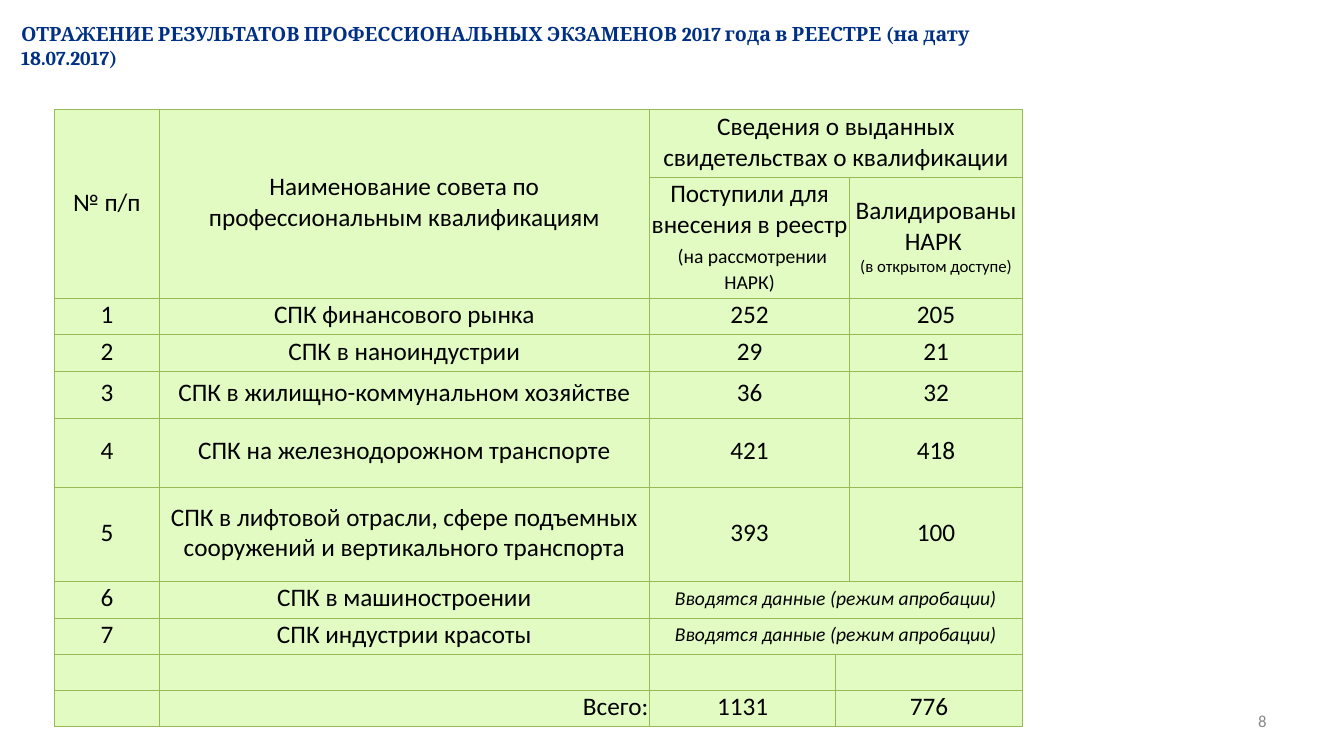
from lxml import etree
from pptx import Presentation
from pptx.dml.color import RGBColor
from pptx.enum import text
from pptx.oxml import ns
from pptx.util import Inches, Pt

COLORS = {"title": "003085", "text": "000000", "fill": "E2FBC2",
          "border": "98B955", "number": "898989"}
CENTER, RIGHT, LEFT = text.PP_ALIGN.CENTER, text.PP_ALIGN.RIGHT, text.PP_ALIGN.LEFT


def add_run(paragraph, content, color="text", **formats):
    run = paragraph.add_run()
    run.text = content
    run.font.color.rgb = RGBColor.from_string(COLORS[color])
    for name, value in {"name": "Calibri", "size": Pt(18), "bold": False, **formats}.items():
        setattr(run.font, name, value)


def style_cell(cell):
    """Apply the shared fill, margins, anchor and thin borders."""
    cell.fill.solid()
    cell.fill.fore_color.rgb = RGBColor.from_string(COLORS["fill"])
    cell.vertical_anchor = text.MSO_ANCHOR.MIDDLE
    cell.margin_left = cell.margin_right = cell.margin_top = Inches(0.01)
    cell.margin_bottom = Inches(0.04)
    properties = cell._tc.get_or_add_tcPr()
    for position, side in enumerate(("lnL", "lnR", "lnT", "lnB")):
        line = etree.Element(ns.qn(f"a:{side}"), w=str(Pt(0.75)))
        fill = etree.SubElement(line, ns.qn("a:solidFill"))
        etree.SubElement(fill, ns.qn("a:srgbClr"), val=COLORS["border"])
        properties.insert(position, line)


presentation = Presentation()
presentation.slide_width = Inches(13.33)
presentation.slide_height = Inches(7.5)
slide = presentation.slides.add_slide(presentation.slide_layouts[5])

# Title
title = slide.shapes.title
title.left, title.top, title.width, title.height = map(Inches, (0.11, 0.09, 10.04, 0.73))
title.text_frame.auto_size = text.MSO_AUTO_SIZE.NONE
title.text_frame.vertical_anchor = text.MSO_ANCHOR.MIDDLE
paragraph = title.text_frame.paragraphs[0]
paragraph.alignment = LEFT
add_run(paragraph, "ОТРАЖЕНИЕ РЕЗУЛЬТАТОВ ПРОФЕССИОНАЛЬНЫХ ЭКЗАМЕНОВ 2017 года "
        "в РЕЕСТРЕ (на дату 18.07.2017)", "title", name="Cambria", size=Pt(14), bold=True)

# Table grid
widths = [1.04, 4.86, 1.85, 0.14, 1.71]
heights = [0.67, 1.2, 0.36, 0.36, 0.47, 0.68, 0.94, 0.36, 0.36, 0.36, 0.36]
table = slide.shapes.add_table(
    len(heights), len(widths), Inches(0.54), Inches(1.09),
    Inches(sum(widths)), Inches(sum(heights))).table
table.first_row = table.horz_banding = False
for column, width in zip(table.columns, widths):
    column.width = Inches(width)
for row, height in zip(table.rows, heights):
    row.height = Inches(height)
for cell in table.iter_cells():
    style_cell(cell)
    cell.text_frame.paragraphs[0].font.size = Pt(18)

# Header
for first, last in [((0, 0), (1, 0)), ((0, 1), (1, 1)), ((0, 2), (0, 4)), ((1, 2), (1, 3))]:
    table.cell(*first).merge(table.cell(*last))
headers = {(0, 0): "№ п/п",
           (0, 1): "Наименование совета по профессиональным квалификациям",
           (0, 2): "Сведения о выданных свидетельствах о квалификации",
           (1, 2): "Поступили для внесения в реестр",
           (1, 4): "Валидированы НАРК "}
for position, content in headers.items():
    paragraph = table.cell(*position).text_frame.paragraphs[0]
    paragraph.alignment = CENTER
    add_run(paragraph, content)
received_note = table.cell(1, 2).text_frame.add_paragraph()
received_note.alignment = CENTER
add_run(received_note, " ")
add_run(received_note, "(на рассмотрении НАРК)", size=Pt(14))
validated = table.cell(1, 4).text_frame.paragraphs[0]
validated.add_line_break()
add_run(validated, "(в открытом доступе)", size=Pt(12))

# Councils: name, received, validated (no figures while data are being entered)
councils = [
    ("СПК финансового рынка", 252, 205),
    ("СПК в наноиндустрии", 29, 21),
    ("СПК в жилищно-коммунальном хозяйстве", 36, 32),
    ("СПК на железнодорожном транспорте", 421, 418),
    ("СПК в лифтовой отрасли, сфере подъемных сооружений и вертикального транспорта", 393, 100),
    ("СПК в машиностроении",),
    ("СПК индустрии красоты",),
]
for number, (council, *figures) in enumerate(councils, 1):
    row = number + 1
    table.cell(row, 2).merge(table.cell(row, 3 if figures else 4))
    contents = {0: number, 1: council}
    contents.update(zip((2, 4), figures or ["Вводятся данные (режим апробации)"]))
    for column, content in contents.items():
        paragraph = table.cell(row, column).text_frame.paragraphs[0]
        paragraph.alignment = CENTER
        pending = column == 2 and not figures
        add_run(paragraph, str(content), size=Pt(14 if pending else 18), italic=pending)

# Empty row and totals
for row in (9, 10):
    table.cell(row, 3).merge(table.cell(row, 4))
for column, content, alignment in [(1, "Всего:", RIGHT), (2, "1131", CENTER), (3, "776", CENTER)]:
    paragraph = table.cell(10, column).text_frame.paragraphs[0]
    paragraph.alignment = alignment
    add_run(paragraph, content)

# Slide number
number_box = slide.shapes.add_textbox(*map(Inches, (9.55, 6.95, 3.11, 0.4)))
number_box.text_frame.word_wrap = True
number_box.text_frame.vertical_anchor = text.MSO_ANCHOR.MIDDLE
paragraph = number_box.text_frame.paragraphs[0]
paragraph.alignment = RIGHT
add_run(paragraph, "8", "number", size=Pt(12))

presentation.save("out.pptx")
